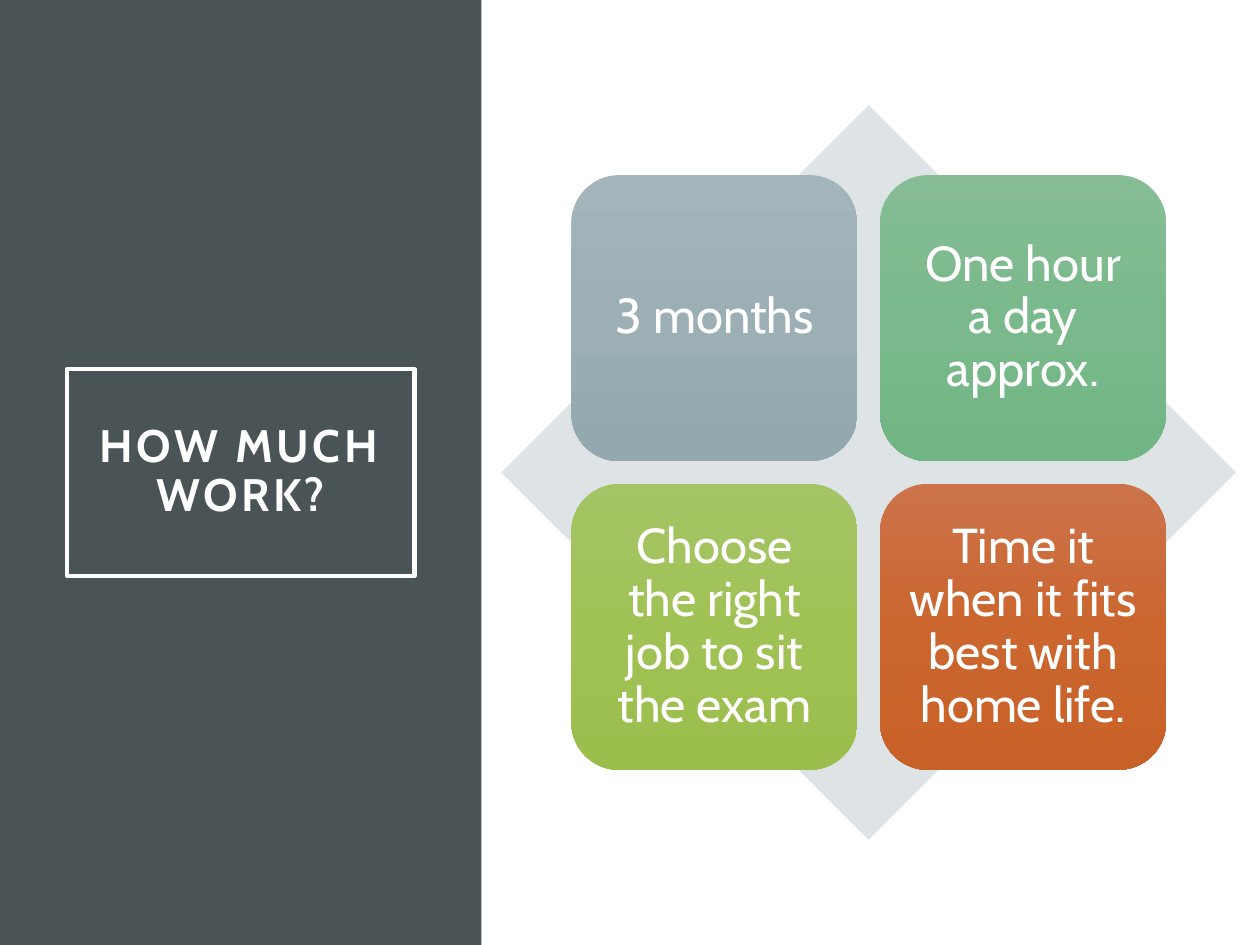
from copy import deepcopy

from pptx import Presentation
from pptx.dml.color import RGBColor
from pptx.enum.shapes import MSO_SHAPE as SHAPE
from pptx.enum.text import MSO_ANCHOR, MSO_AUTO_SIZE, PP_ALIGN
from pptx.oxml.ns import qn
from pptx.util import Inches, Pt

TITLE = "HOW MUCH WORK?"
TILES = [  # text, gradient from top to bottom
    ("3 months", ("A3B5BB", "9BAFB5", "93A9AF")),
    ("One hour a day approx.", ("86BD95", "7AB98B", "72B584")),
    ("Choose the right job to sit the exam", ("A5C466", "A0C255", "9BBE4D")),
    ("Time it when it fits best with home life.", ("CC734B", "CB662F", "C86128")),
]
FONT, WHITE, PANEL, DIAMOND = "Cabin", "FFFFFF", "4A5356", "DEE3E5"

SLIDE_W, SLIDE_H = 10, 7.5
PANEL_W = 3.82
TITLE_W, TITLE_H = 2.76, 1.64
DIAMOND_LEFT, DIAMOND_SIZE = 3.98, 5.83
TILE, GAP = 2.27, 0.18
COLUMNS = 2


def color(hex_string):
    return RGBColor.from_string(hex_string)


def add_shape(shapes, kind, left, top, width, height, fill=None):
    sp = shapes.add_shape(kind, *map(Inches, (left, top, width, height)))
    sp.shadow.inherit = False
    sp.line.fill.background()
    if fill:
        sp.fill.solid()
        sp.fill.fore_color.rgb = color(fill)
    return sp


def fill_gradient(sp, colors):
    """Fill from top to bottom with three evenly spaced colours."""
    sp.fill.gradient()
    sp.fill.gradient_angle = 270
    first = sp._element.spPr.find(".//" + qn("a:gs"))
    first.addnext(deepcopy(first))
    for i, (stop, hex_string) in enumerate(zip(sp.fill.gradient_stops, colors)):
        stop.position = i / (len(colors) - 1)
        stop.color.rgb = color(hex_string)


def set_text(sp, text, size, inset, bold=False):
    tf = sp.text_frame
    tf.text = text
    tf.word_wrap = True
    tf.auto_size = MSO_AUTO_SIZE.NONE
    tf.vertical_anchor = MSO_ANCHOR.MIDDLE
    tf.margin_left = tf.margin_right = Inches(inset)
    tf.margin_top = tf.margin_bottom = Inches(inset)
    p = tf.paragraphs[0]
    p.alignment = PP_ALIGN.CENTER
    p.line_spacing = 0.9
    p.font.name, p.font.size, p.font.bold = FONT, Pt(size), bold
    p.font.color.rgb = color(WHITE)
    return p


def add_title(slide):
    panel = add_shape(slide.shapes, SHAPE.RECTANGLE, 0, 0, PANEL_W, SLIDE_H, PANEL)
    title = slide.shapes.title
    title._element.addprevious(panel._element)
    title.left, title.top = Inches(0.53), Inches((SLIDE_H - TITLE_H) / 2)
    title.width, title.height = Inches(TITLE_W), Inches(TITLE_H)
    title.line.color.rgb = color(WHITE)
    title.line.width = Pt(2.5)
    p = set_text(title, TITLE, 26, 0.2, bold=True)
    p.runs[0].font._element.set("spc", "200")


def add_matrix(slide):
    shapes = slide.shapes.add_group_shape().shapes
    diamond_top = (SLIDE_H - DIAMOND_SIZE) / 2
    add_shape(shapes, SHAPE.DIAMOND, DIAMOND_LEFT, diamond_top,
              DIAMOND_SIZE, DIAMOND_SIZE, DIAMOND)
    margin = (DIAMOND_SIZE - COLUMNS * TILE - GAP) / 2
    for i, (text, colors) in enumerate(TILES):
        row, col = divmod(i, COLUMNS)
        sp = add_shape(shapes, SHAPE.ROUNDED_RECTANGLE,
                       DIAMOND_LEFT + margin + col * (TILE + GAP),
                       diamond_top + margin + row * (TILE + GAP), TILE, TILE)
        fill_gradient(sp, colors)
        set_text(sp, text, 28, 0.12)


def main():
    prs = Presentation()
    prs.slide_width, prs.slide_height = Inches(SLIDE_W), Inches(SLIDE_H)
    slide = prs.slides.add_slide(prs.slide_layouts[5])
    add_title(slide)
    add_matrix(slide)
    prs.save("out.pptx")


if __name__ == "__main__":
    main()
